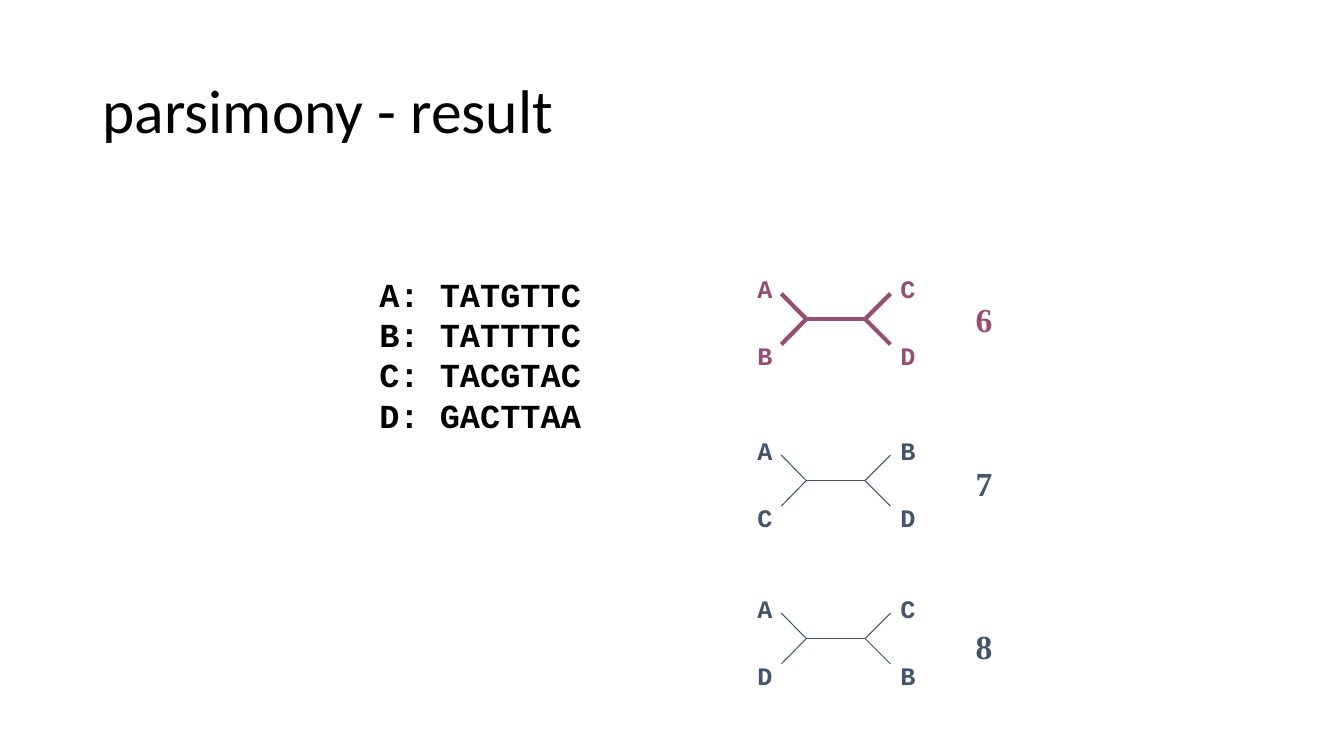
from dataclasses import dataclass

import lxml.etree
import pptx
import pptx.dml.color
import pptx.enum.shapes
import pptx.enum.text
import pptx.oxml.ns
import pptx.slide
import pptx.text.text
import pptx.util

Cm = pptx.util.Cm
Pt = pptx.util.Pt

BLACK = "000000"
BEST = "954F72"
OTHER = "44546A"

LEFT_NODE, RIGHT_NODE = 20.32, 21.8
LEFT_TIP, RIGHT_TIP = 19.69, 22.44
TIP_RISE = 0.64
LEFT_LABEL, RIGHT_LABEL = 18.84, 22.44
UPPER_LABEL, LOWER_LABEL = -1.27, 0.42


@dataclass(frozen=True)
class Line:
    text: str
    color: str
    space_before: float = 0


@dataclass(frozen=True)
class Tree:
    left: str
    right: str
    axis: float
    color: str
    width: float
    score: str


TREES = [
    Tree("AB", "CD", 8.04, BEST, 3, "6"),
    Tree("AC", "BD", 12.11, OTHER, 0.75, "7"),
    Tree("AD", "CB", 16.09, OTHER, 0.75, "8"),
]
SEQUENCES = ["A: TATGTTC", "B: TATTTTC", "C: TACGTAC", "D: GACTTAA"]


def rgb(color: str) -> pptx.dml.color.RGBColor:
    return pptx.dml.color.RGBColor.from_string(color)


def add_run(paragraph: pptx.text.text._Paragraph, text: str, font: str,
            size: float, color: str, bold: bool = True) -> None:
    run = paragraph.add_run()
    run.text = text
    run.font.name = font
    run.font.size = Pt(size)
    run.font.bold = bold
    run.font.color.rgb = rgb(color)


def add_lines(slide: pptx.slide.Slide, left: float, top: float, width: float,
              height: float, lines: list[Line], font: str, size: float) -> None:
    frame = slide.shapes.add_textbox(Cm(left), Cm(top), Cm(width), Cm(height)).text_frame
    frame.word_wrap = False
    frame.auto_size = pptx.enum.text.MSO_AUTO_SIZE.SHAPE_TO_FIT_TEXT
    for index, line in enumerate(lines):
        paragraph = frame.add_paragraph() if index else frame.paragraphs[0]
        paragraph.space_before = Pt(line.space_before)
        add_run(paragraph, line.text, font, size, line.color)


def add_branch(slide: pptx.slide.Slide, tree: Tree, start_x: float,
               end_x: float, rise: float) -> None:
    branch = slide.shapes.add_connector(
        pptx.enum.shapes.MSO_CONNECTOR.STRAIGHT,
        Cm(start_x), Cm(tree.axis), Cm(end_x), Cm(tree.axis + rise))
    branch.line.color.rgb = rgb(tree.color)
    branch.line.width = Pt(tree.width)
    lxml.etree.SubElement(branch._element.spPr, pptx.oxml.ns.qn("a:effectLst"))


def add_tree(slide: pptx.slide.Slide, tree: Tree) -> None:
    add_branch(slide, tree, LEFT_NODE, RIGHT_NODE, 0)
    sides = [(tree.left, LEFT_NODE, LEFT_TIP, LEFT_LABEL),
             (tree.right, RIGHT_NODE, RIGHT_TIP, RIGHT_LABEL)]
    for taxa, node, tip, label_left in sides:
        for taxon, rise, label_top in zip(taxa, (-TIP_RISE, TIP_RISE),
                                          (UPPER_LABEL, LOWER_LABEL)):
            add_branch(slide, tree, node, tip, rise)
            add_lines(slide, label_left, tree.axis + label_top, 0.89, 1.02,
                      [Line(taxon, tree.color)], "Courier New", 18)


def add_title(slide: pptx.slide.Slide, text: str) -> None:
    title = slide.shapes.title
    title.left, title.top = Cm(2.33), Cm(1.02)
    title.width, title.height = Cm(29.21), Cm(3.68)
    frame = title.text_frame
    frame.auto_size = pptx.enum.text.MSO_AUTO_SIZE.NONE
    frame.vertical_anchor = pptx.enum.text.MSO_ANCHOR.MIDDLE
    paragraph = frame.paragraphs[0]
    paragraph.alignment = pptx.enum.text.PP_ALIGN.LEFT
    paragraph.line_spacing = 0.9
    add_run(paragraph, text, "Calibri", 44, BLACK, bold=False)


def main() -> None:
    presentation = pptx.Presentation()
    presentation.slide_width = Cm(33.87)
    presentation.slide_height = Cm(19.05)
    slide = presentation.slides.add_slide(presentation.slide_layouts[5])

    add_title(slide, "parsimony - result")
    add_lines(slide, 9.31, 6.77, 5.64, 4.37,
              [Line(sequence, BLACK) for sequence in SEQUENCES], "Courier New", 24)
    for tree in TREES:
        add_tree(slide, tree)
    scores = [Line(tree.score, tree.color, 88 if index else 0)
              for index, tree in enumerate(TREES)]
    add_lines(slide, 24.34, 7.41, 0.94, 9.5, scores, "Times New Roman", 24)

    presentation.save("out.pptx")


if __name__ == "__main__":
    main()
